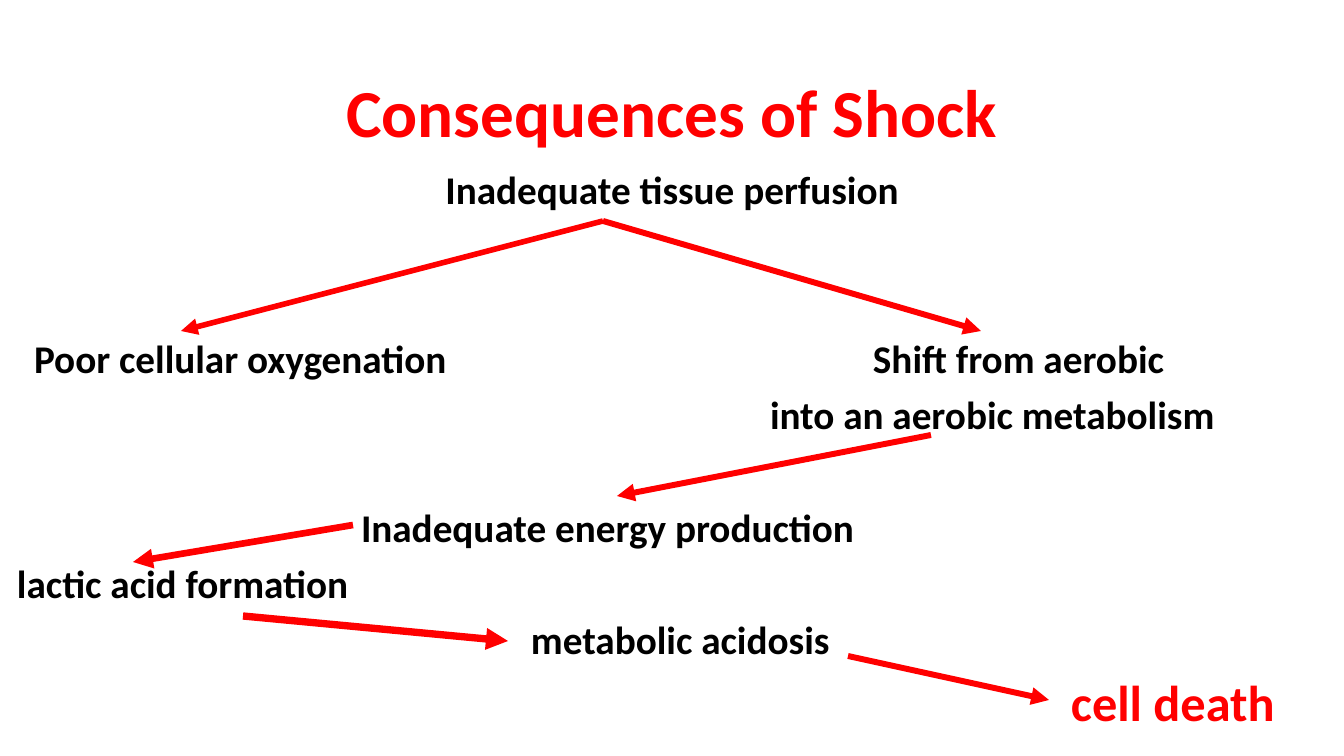
from lxml.etree import SubElement
from pptx import Presentation
from pptx.dml.color import RGBColor
from pptx.enum.shapes import MSO_CONNECTOR
from pptx.enum.text import MSO_ANCHOR, PP_ALIGN
from pptx.oxml.ns import qn
from pptx.util import Pt

EMU_PER_PX = 914400 / 100.8
SLIDE_WIDTH, SLIDE_HEIGHT = 1344, 756
RED = RGBColor(0xFF, 0x00, 0x00)
BLACK = RGBColor(0x00, 0x00, 0x00)
FONT = "Calibri"
ROW_HEIGHT = 56

STATEMENTS = [
    ("Poor cellular oxygenation", 34, 3, 440),
    ("Shift from aerobic", 873, 3, 320),
    ("into an aerobic metabolism", 770, 4, 475),
    ("Inadequate energy production", 361, 6, 525),
    ("lactic acid formation", 17, 7, 360),
    ("metabolic acidosis", 531, 8, 330),
]

ARROWS = [
    ((603, 60), (181, 170), 4),
    ((603, 60), (981, 170), 4.25),
    ((931, 274), (617, 335), 4.25),
    ((353, 364), (133, 401), 4.75),
    ((243, 455), (508, 480), 5.25),
    ((848, 495), (1049, 539), 4.25),
]


def px(length):
    """Turn a length in px into EMU."""
    return round(length * EMU_PER_PX)


def add_text(slide, text, box, size=28, color=BLACK, align=PP_ALIGN.LEFT):
    """Write one bold line of text, centred vertically in its box."""
    frame = slide.shapes.add_textbox(*map(px, box)).text_frame
    frame.word_wrap = True
    frame.vertical_anchor = MSO_ANCHOR.MIDDLE
    frame.margin_left = frame.margin_right = 0
    frame.margin_top = frame.margin_bottom = 0
    paragraph = frame.paragraphs[0]
    paragraph.alignment = align
    run = paragraph.add_run()
    run.text = text
    run.font.name = FONT
    run.font.size = Pt(size)
    run.font.bold = True
    run.font.color.rgb = color


def add_arrow(slide, start, end, weight):
    """Draw a red arrow from start to end."""
    arrow = slide.shapes.add_connector(
        MSO_CONNECTOR.STRAIGHT, *map(px, (*start, *end))
    )
    arrow.line.color.rgb = RED
    arrow.line.width = Pt(weight)
    SubElement(arrow.line._get_or_add_ln(), qn("a:tailEnd"), type="triangle")
    SubElement(arrow._element.spPr, qn("a:effectLst"))


def add_heading(slide, box):
    """Place the slide title."""
    add_text(slide, "Consequences of Shock", box, size=48, color=RED,
             align=PP_ALIGN.CENTER)


def add_cascade(slide, box):
    """Place the chain of consequences and the arrows that link it."""
    left, top, width, _ = box
    add_text(slide, "Inadequate tissue perfusion",
             (left, top, width, ROW_HEIGHT), align=PP_ALIGN.CENTER)
    for statement, indent, row, length in STATEMENTS:
        row_top = top + row * ROW_HEIGHT + row // 3
        add_text(slide, statement,
                 (left + indent, row_top, length, ROW_HEIGHT))
    add_text(slide, "cell death", (left + 1071, top + 508, 240, 64),
             size=36, color=RED)
    for start, end, weight in ARROWS:
        add_arrow(slide, (left + start[0], top + start[1]),
                  (left + end[0], top + end[1]), weight)


def main():
    """Build and save the slide."""
    deck = Presentation()
    deck.slide_width = px(SLIDE_WIDTH)
    deck.slide_height = px(SLIDE_HEIGHT)
    slide = deck.slides.add_slide(deck.slide_layouts[6])
    add_heading(slide, (92, 38, 1160, 146))
    add_cascade(slide, (0, 161, SLIDE_WIDTH, 589))
    deck.save("out.pptx")


if __name__ == "__main__":
    main()
